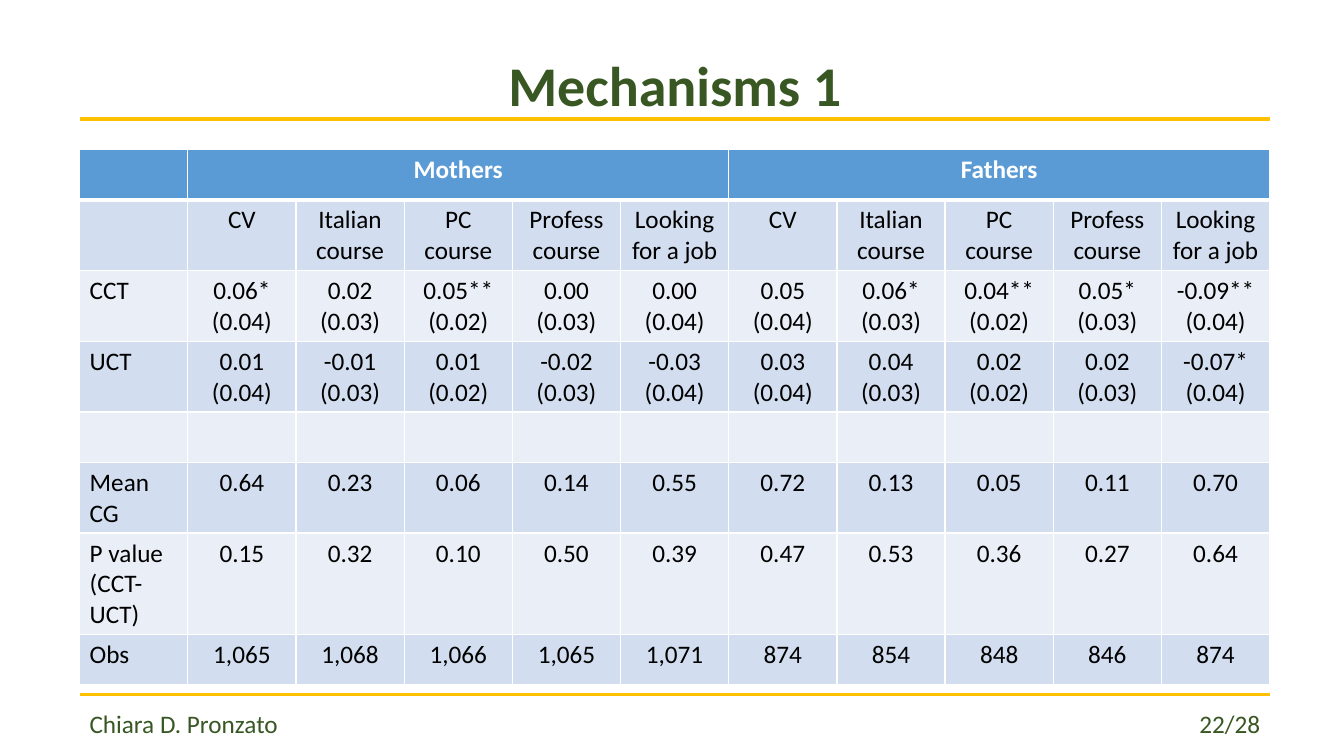
import lxml.etree
import pptx
import pptx.dml.color
import pptx.enum.shapes
import pptx.enum.text
import pptx.oxml.ns
import pptx.util

Pt = pptx.util.Pt
ALIGN = pptx.enum.text.PP_ALIGN
ANCHOR = pptx.enum.text.MSO_ANCHOR
qn = pptx.oxml.ns.qn

LEFT, COLUMN_WIDTH = 56.9, 77.3
GREEN, GOLD, WHITE, BLACK = "385723", "FFC000", "FFFFFF", "000000"
HEADER_FILL, BAND_FILLS = "5B9BD5", ("D2DEEF", "EAEFF7")

COURSES = ["CV", "Italian course", "PC course", "Profess course", "Looking for a job"]
ROWS = [
    ["", "Mothers", "", "", "", "", "Fathers", "", "", "", ""],
    ["", *COURSES, *COURSES],
    ["CCT", "0.06* (0.04)", "0.02 (0.03)", "0.05** (0.02)", "0.00 (0.03)", "0.00 (0.04)",
     "0.05 (0.04)", "0.06* (0.03)", "0.04** (0.02)", "0.05* (0.03)", "-0.09** (0.04)"],
    ["UCT", "0.01 (0.04)", "-0.01 (0.03)", "0.01 (0.02)", "-0.02 (0.03)", "-0.03 (0.04)",
     "0.03 (0.04)", "0.04 (0.03)", "0.02 (0.02)", "0.02 (0.03)", "-0.07* (0.04)"],
    [""] * 11,
    ["Mean CG", "0.64", "0.23", "0.06", "0.14", "0.55", "0.72", "0.13", "0.05", "0.11", "0.70"],
    ["P value (CCT-UCT)", "0.15", "0.32", "0.10", "0.50", "0.39",
     "0.47", "0.53", "0.36", "0.27", "0.64"],
    ["Obs", "1,065", "1,068", "1,066", "1,065", "1,071", "874", "854", "848", "846", "874"],
]
ROW_HEIGHTS = [36, 50.5, 50.5, 50.5, 36, 50.5, 72.5, 36]
WIDTH = COLUMN_WIDTH * len(ROWS[0])


def color(value):
    return pptx.dml.color.RGBColor.from_string(value)


class SlideBuilder:
    """Holds the text style and the current slide."""

    def __init__(self, slide, font="Calibri", size=18):
        self.slide = slide
        self.font = font
        self.size = size

    def fill_text(self, frame, text, ink, align, size=None, bold=False):
        paragraph = frame.paragraphs[0]
        paragraph.text = text
        paragraph.alignment = align
        style = {"name": self.font, "size": Pt(size or self.size), "bold": bold}
        for name, value in style.items():
            setattr(paragraph.font, name, value)
        paragraph.font.color.rgb = color(ink)

    def text(self, top, height, text, align, left=LEFT, width=WIDTH, **style):
        shape = self.slide.shapes.add_textbox(Pt(left), Pt(top), Pt(width), Pt(height))
        frame = shape.text_frame
        frame.word_wrap = True
        frame.vertical_anchor = ANCHOR.MIDDLE
        self.fill_text(frame, text, GREEN, align, **style)

    def rule(self, y):
        line = self.slide.shapes.add_connector(
            pptx.enum.shapes.MSO_CONNECTOR.STRAIGHT, Pt(LEFT), Pt(y), Pt(LEFT + WIDTH), Pt(y))
        line.line.color.rgb = color(GOLD)
        line.line.width = Pt(2.25)
        lxml.etree.SubElement(line._element.spPr, qn("a:effectLst"))

    def borders(self, cell, top, bottom):
        properties = cell._tc.get_or_add_tcPr()
        for side, width in {"L": 1, "R": 1, "T": top, "B": bottom}.items():
            border = lxml.etree.SubElement(properties, qn(f"a:ln{side}"), w=str(Pt(width)))
            fill = lxml.etree.SubElement(border, qn("a:solidFill"))
            lxml.etree.SubElement(fill, qn("a:srgbClr"), val=WHITE)

    def table(self, top, rows, heights):
        table = self.slide.shapes.add_table(
            len(rows), len(rows[0]), Pt(LEFT), Pt(top), Pt(WIDTH), Pt(sum(heights))).table
        for column in table.columns:
            column.width = Pt(COLUMN_WIDTH)
        for index, (texts, height) in enumerate(zip(rows, heights)):
            table.rows[index].height = Pt(height)
            header = index == 0
            for position, text in enumerate(texts):
                cell = table.cell(index, position)
                self.borders(cell, 3 if index == 1 else 1, 3 if header else 1)
                cell.fill.solid()
                cell.fill.fore_color.rgb = color(
                    HEADER_FILL if header else BAND_FILLS[(index - 1) % 2])
                self.fill_text(cell.text_frame, text, WHITE if header else BLACK,
                               ALIGN.CENTER if position else ALIGN.LEFT, bold=header)
        # Each parent heading spans its five outcomes
        for first in (1, 6):
            table.cell(0, first).merge(table.cell(0, first + 4))


def main():
    presentation = pptx.Presentation()
    presentation.slide_width, presentation.slide_height = Pt(960), Pt(540)
    builder = SlideBuilder(presentation.slides.add_slide(presentation.slide_layouts[6]))

    # Title and rules
    builder.text(30, 60, "Mechanisms 1", ALIGN.CENTER, size=40, bold=True)
    for y in (85, 496):
        builder.rule(y)

    # Results
    builder.table(106.8, ROWS, ROW_HEIGHTS)

    # Footer
    builder.text(502, 30, "Chiara D. Pronzato", ALIGN.LEFT, width=WIDTH / 2)
    builder.text(502, 30, "22/28", ALIGN.RIGHT, left=LEFT + WIDTH / 2, width=WIDTH / 2)

    presentation.save("out.pptx")


if __name__ == "__main__":
    main()
